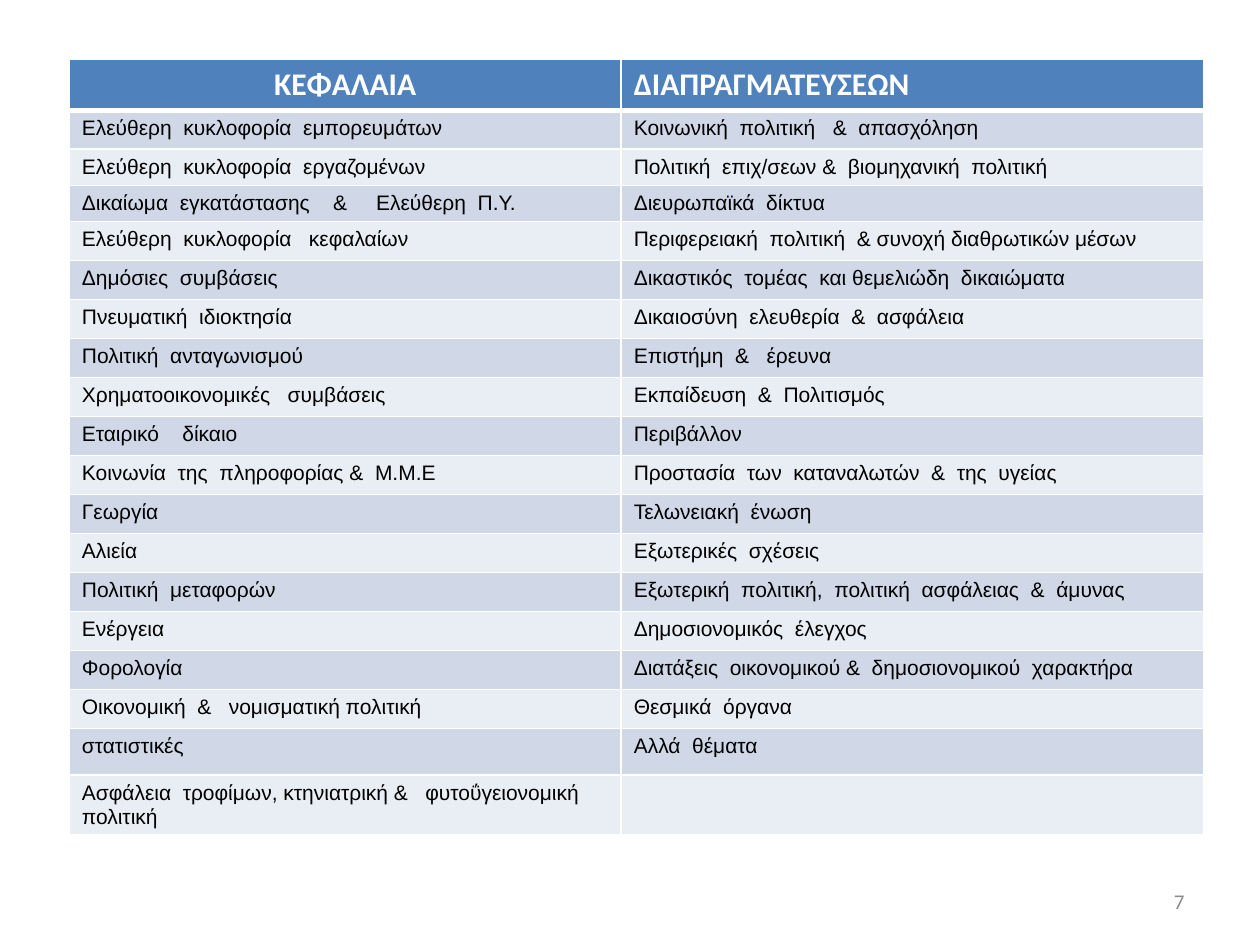
from lxml.etree import SubElement
from pptx import Presentation
from pptx.dml.color import RGBColor
from pptx.enum.text import MSO_ANCHOR, PP_ALIGN
from pptx.oxml.ns import qn
from pptx.util import Pt

COLORS = {
    "header": "4F81BD",
    "odd": "D0D8E8",
    "even": "E9EDF4",
    "white": "FFFFFF",
    "black": "000000",
    "number": "8C8C8C",
}

HEADER = ("ΚΕΦΑΛΑΙΑ", "ΔΙΑΠΡΑΓΜΑΤΕΥΣΕΩΝ")
CHAPTERS = [
    ("Ελεύθερη  κυκλοφορία  εμπορευμάτων", "Κοινωνική  πολιτική   &  απασχόληση"),
    ("Ελεύθερη  κυκλοφορία  εργαζομένων", "Πολιτική  επιχ/σεων &  βιομηχανική  πολιτική"),
    ("Δικαίωμα  εγκατάστασης    &     Ελεύθερη  Π.Υ.", "Διευρωπαϊκά  δίκτυα"),
    ("Ελεύθερη  κυκλοφορία   κεφαλαίων", "Περιφερειακή  πολιτική  & συνοχή διαθρωτικών μέσων"),
    ("Δημόσιες  συμβάσεις", "Δικαστικός  τομέας  και θεμελιώδη  δικαιώματα"),
    ("Πνευματική  ιδιοκτησία", "Δικαιοσύνη  ελευθερία  &  ασφάλεια"),
    ("Πολιτική  ανταγωνισμού", "Επιστήμη  &   έρευνα"),
    ("Χρηματοοικονομικές   συμβάσεις", "Εκπαίδευση  &  Πολιτισμός"),
    ("Εταιρικό    δίκαιο", "Περιβάλλον"),
    ("Κοινωνία  της  πληροφορίας &  Μ.Μ.Ε", "Προστασία  των  καταναλωτών  &  της  υγείας"),
    ("Γεωργία", "Τελωνειακή  ένωση"),
    ("Αλιεία", "Εξωτερικές  σχέσεις"),
    ("Πολιτική  μεταφορών", "Εξωτερική  πολιτική,  πολιτική  ασφάλειας  &  άμυνας"),
    ("Ενέργεια", "Δημοσιονομικός  έλεγχος"),
    ("Φορολογία", "Διατάξεις  οικονομικού &  δημοσιονομικού  χαρακτήρα"),
    ("Οικονομική  &   νομισματική πολιτική", "Θεσμικά  όργανα"),
    ("στατιστικές", "Αλλά  θέματα"),
    ("Ασφάλεια  τροφίμων, κτηνιατρική &   φυτοΰγειονομική  πολιτική", ""),
]
COLUMN_WIDTHS = (315.4, 332.6)
ROW_HEIGHTS = [26.7, 22.3, 10.8, 18.7] + [22.3] * 13 + [26.7] * 2


def add_run(p, text, font, size, color, bold=False):
    r = p.add_run()
    r.text = text
    r.font.name = font
    r.font.size = Pt(size)
    r.font.bold = bold
    r.font.color.rgb = RGBColor.from_string(COLORS[color])


def set_borders(cell, top=1, bottom=1):
    """Draw white lines of the given point widths round a cell."""
    tc_pr = cell._tc.get_or_add_tcPr()
    for side, width in (("L", 1), ("R", 1), ("T", top), ("B", bottom)):
        ln = SubElement(tc_pr, qn(f"a:ln{side}"), w=str(Pt(width)))
        fill = SubElement(ln, qn("a:solidFill"))
        SubElement(fill, qn("a:srgbClr"), val=COLORS["white"])


def fill_cell(cell, color):
    cell.fill.solid()
    cell.fill.fore_color.rgb = RGBColor.from_string(COLORS[color])


def add_chapter_table(slide):
    rows = [HEADER] + CHAPTERS
    frame = slide.shapes.add_table(len(rows), 2, Pt(39.6), Pt(33.8), Pt(648), Pt(442))
    table = frame.table
    for column, width in zip(table.columns, COLUMN_WIDTHS):
        column.width = Pt(width)
    for i, (texts, height) in enumerate(zip(rows, ROW_HEIGHTS)):
        table.rows[i].height = Pt(height)
        for cell, text in zip(table.rows[i].cells, texts):
            set_borders(cell, top=3 if i == 1 else 1, bottom=3 if i == 0 else 1)
            p = cell.text_frame.paragraphs[0]
            if i == 0:
                fill_cell(cell, "header")
                add_run(p, text, "Calibri", 18, "white", bold=True)
            else:
                fill_cell(cell, "odd" if i % 2 else "even")
                if text:
                    add_run(p, text, "Arial", 12, "black")
    table.cell(0, 0).text_frame.paragraphs[0].alignment = PP_ALIGN.CENTER
    frame.height = Pt(442)


def add_page_number(slide, number):
    tf = slide.shapes.add_textbox(Pt(516), Pt(500.5), Pt(168), Pt(28.75)).text_frame
    tf.word_wrap = True
    tf.vertical_anchor = MSO_ANCHOR.MIDDLE
    p = tf.paragraphs[0]
    p.alignment = PP_ALIGN.RIGHT
    add_run(p, number, "Calibri", 12, "number")


def main():
    prs = Presentation()
    prs.slide_width, prs.slide_height = Pt(720), Pt(540)
    slide = prs.slides.add_slide(prs.slide_layouts[6])
    add_chapter_table(slide)
    add_page_number(slide, "7")
    prs.save("out.pptx")


if __name__ == "__main__":
    main()
